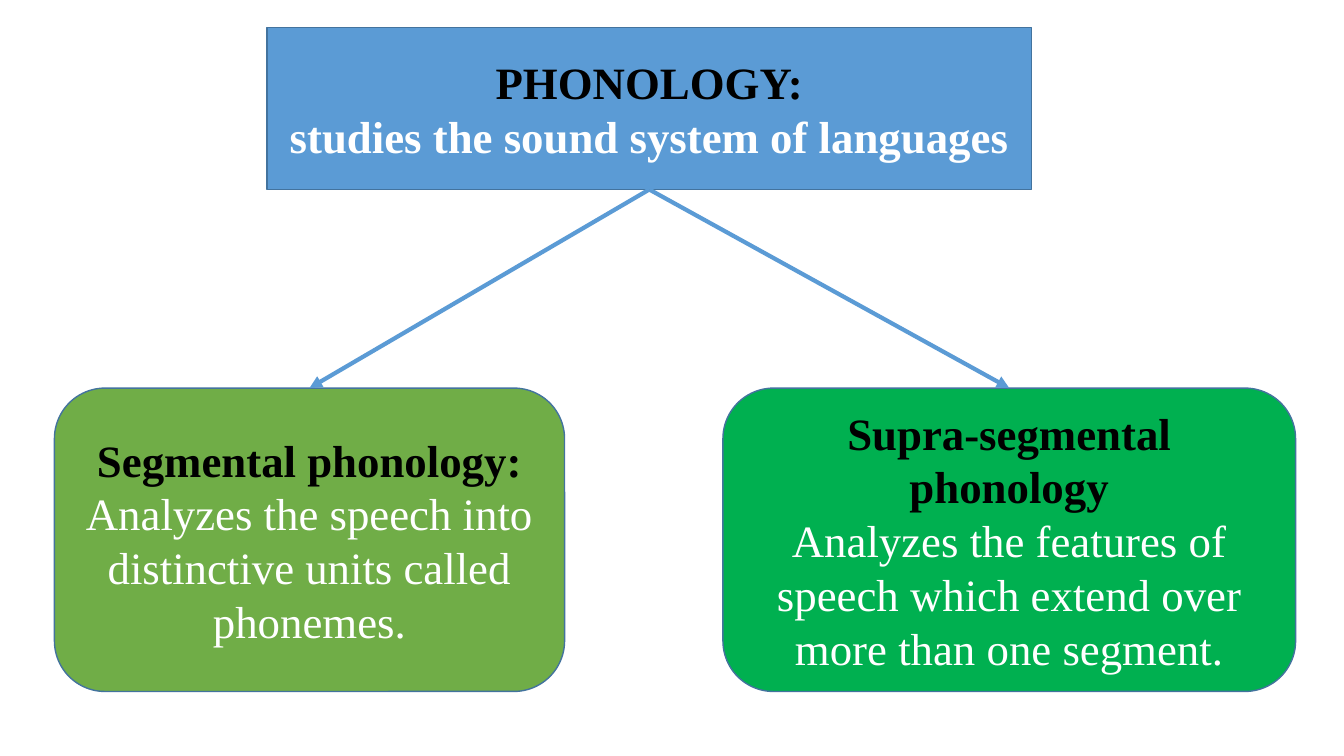
from dataclasses import dataclass

from lxml import etree
from pptx import Presentation
from pptx.dml.color import RGBColor
from pptx.enum.shapes import MSO_CONNECTOR, MSO_SHAPE
from pptx.enum.text import MSO_ANCHOR, PP_ALIGN
from pptx.oxml.ns import qn
from pptx.util import Inches, Pt

RECT, ROUNDED = MSO_SHAPE.RECTANGLE, MSO_SHAPE.ROUNDED_RECTANGLE
STRAIGHT = MSO_CONNECTOR.STRAIGHT
MIDDLE, CENTER = MSO_ANCHOR.MIDDLE, PP_ALIGN.CENTER
TOP, BOTTOM = 0, 2


@dataclass(frozen=True)
class Theme:
    font: str = "Times New Roman"
    size: int = 32
    heading: str = "000000"
    body: str = "FFFFFF"
    blue: str = "5B9BD5"
    olive: str = "70AD47"
    green: str = "00B050"
    outline: str = "43739E"
    outline_width: float = 1
    arrow_width: float = 3


THEME = Theme()
SLIDE_W, SLIDE_H = 13.33, 7.5
ROOT_TOP, ROOT_H = 0.27, 1.61
BRANCH_TOP, BRANCH_H = 3.85, 3.01

# heading, description, fill, left, width
ROOT = ("PHONOLOGY:", "studies the sound system of languages", THEME.blue, 2.65, 7.58)
BRANCHES = [
    ("Segmental phonology:",
     "Analyzes the speech into distinctive units called phonemes.",
     THEME.olive, 0.54, 5.06),
    ("Supra-segmental phonology",
     "Analyzes the features of speech which extend over more than one segment.",
     THEME.green, 7.17, 5.68),
]


def rgb(value):
    return RGBColor.from_string(value)


def add_box(slide, content, kind, top, height, bold_body=False):
    heading, body, fill, left, width = content
    sp = slide.shapes.add_shape(
        kind, Inches(left), Inches(top), Inches(width), Inches(height))
    sp.shadow.inherit = False
    sp.fill.solid()
    sp.fill.fore_color.rgb = rgb(fill)
    sp.line.color.rgb = rgb(THEME.outline)
    sp.line.width = Pt(THEME.outline_width)
    tf = sp.text_frame
    tf.word_wrap = True
    tf.vertical_anchor = MIDDLE
    tf.text = f"{heading}\n{body}"
    styles = [(THEME.heading, True), (THEME.body, bold_body)]
    for p, (color, bold) in zip(tf.paragraphs, styles):
        p.alignment = CENTER
        font = p.runs[0].font
        font.name, font.size, font.bold = THEME.font, Pt(THEME.size), bold
        font.color.rgb = rgb(color)
    return sp


def add_arrow(slide, source, target):
    """Join the bottom of source to the top of target."""
    line = slide.shapes.add_connector(STRAIGHT, 0, 0, 0, 0)
    line.begin_connect(source, BOTTOM)
    line.end_connect(target, TOP)
    line.line.color.rgb = rgb(THEME.blue)
    line.line.width = Pt(THEME.arrow_width)
    etree.SubElement(line.line._get_or_add_ln(), qn("a:tailEnd"), type="triangle")
    etree.SubElement(line._element.spPr, qn("a:effectLst"))


def main():
    prs = Presentation()
    prs.slide_width, prs.slide_height = Inches(SLIDE_W), Inches(SLIDE_H)
    slide = prs.slides.add_slide(prs.slide_layouts[6])
    root = add_box(slide, ROOT, RECT, ROOT_TOP, ROOT_H, bold_body=True)
    boxes = [add_box(slide, branch, ROUNDED, BRANCH_TOP, BRANCH_H)
             for branch in BRANCHES]
    for box in boxes:
        add_arrow(slide, root, box)
    prs.save("out.pptx")


if __name__ == "__main__":
    main()
